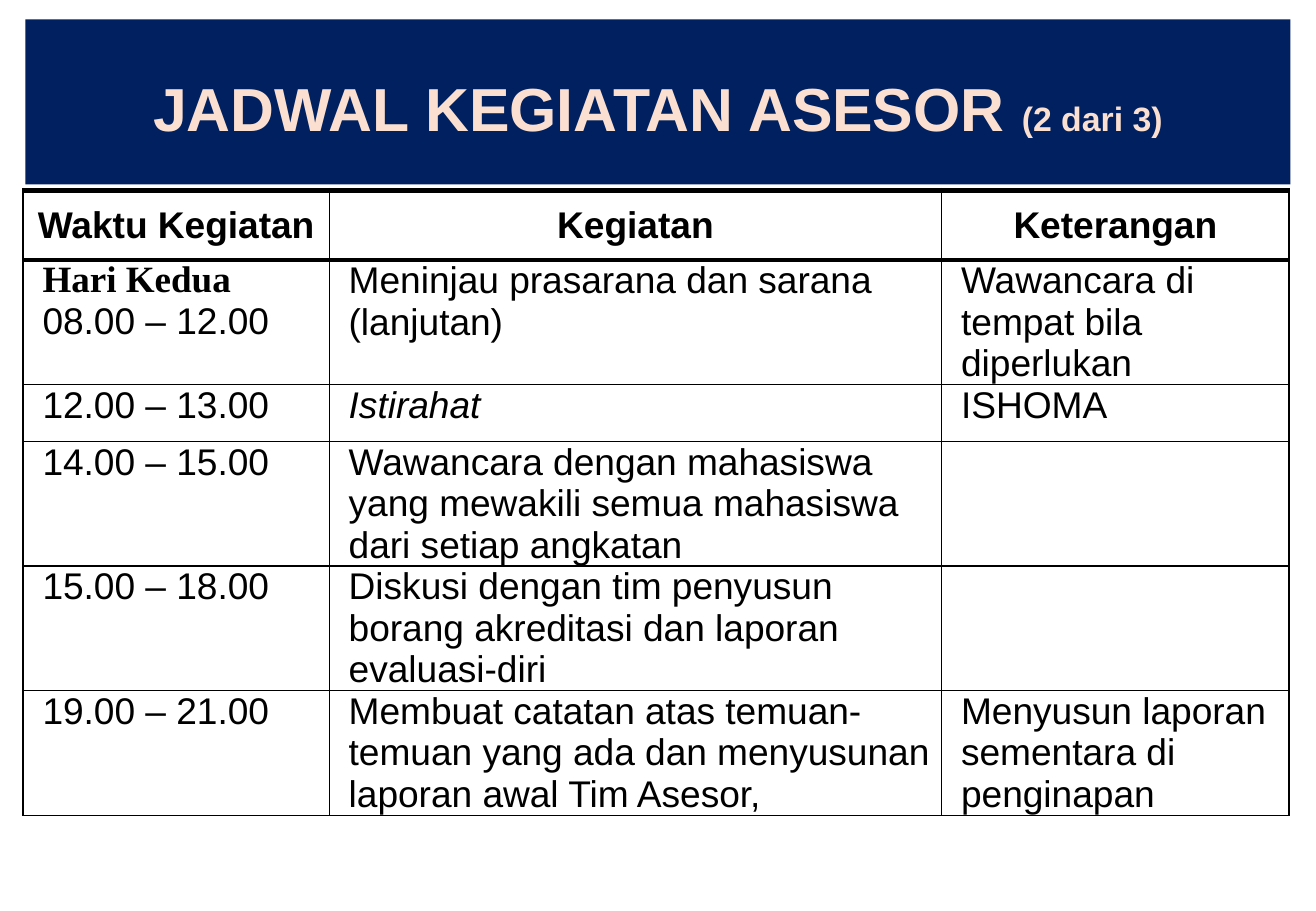
from lxml.etree import SubElement
from pptx import Presentation
from pptx.dml.color import RGBColor
from pptx.enum.shapes import MSO_SHAPE
from pptx.enum.text import MSO_ANCHOR, PP_ALIGN
from pptx.oxml.ns import qn
from pptx.util import Inches, Pt

NAVY = RGBColor(0x00, 0x20, 0x60)
PEACH = RGBColor(0xFB, 0xE0, 0xD1)
BLACK = RGBColor(0x00, 0x00, 0x00)

TITLE = [("JADWAL KEGIATAN ASESOR ", 36), ("(2 dari 3)", 20)]
HEADER = ["Waktu Kegiatan", "Kegiatan", "Keterangan"]
DAY = "Hari Kedua"
SCHEDULE = [
    ([DAY, "08.00 – 12.00"], ["Meninjau prasarana dan sarana (lanjutan)"],
     ["Wawancara di tempat bila diperlukan"]),
    (["12.00 – 13.00"], ["Istirahat"], ["ISHOMA"]),
    (["14.00 – 15.00"],
     ["Wawancara dengan mahasiswa yang mewakili semua mahasiswa dari setiap angkatan"], []),
    (["15.00 – 18.00"],
     ["Diskusi dengan tim penyusun borang akreditasi dan laporan evaluasi-diri"], []),
    (["19.00 – 21.00"],
     ["Membuat catatan atas temuan-temuan yang ada dan menyusunan laporan awal Tim Asesor,"],
     ["Menyusun laporan sementara di penginapan"]),
]
ROWS = [[[label] for label in HEADER], *SCHEDULE]

COLUMN_WIDTHS = [2.52, 5.04, 2.86]
HEADER_HEIGHT, BREAK_HEIGHT, ACTIVITY_HEIGHT = 0.57, 0.47, 1.02
ROW_HEIGHTS = [HEADER_HEIGHT, ACTIVITY_HEIGHT, BREAK_HEIGHT] + [ACTIVITY_HEIGHT] * 3
TABLE_LEFT, TABLE_TOP = 0.19, 1.57
TEXT_SIZE = 22
THIN, MEDIUM, THICK = 1, 2.25, 3.75


def add_run(paragraph, text, size, color, bold=False, italic=False, font="Arial"):
    run = paragraph.add_run()
    run.text = text
    run.font.name = font
    run.font.size = Pt(size)
    run.font.bold = bold
    run.font.italic = italic
    run.font.color.rgb = color


def set_borders(cell, top, bottom):
    properties = cell._tc.get_or_add_tcPr()
    for side, width in (("L", THIN), ("R", THIN), ("T", top), ("B", bottom)):
        line = SubElement(properties, qn(f"a:ln{side}"), w=str(Pt(width)))
        fill = SubElement(line, qn("a:solidFill"))
        SubElement(fill, qn("a:srgbClr"), val=str(BLACK))


def fill_cell(cell, lines, row):
    is_header = row == 0
    set_borders(cell, {0: THICK, 1: MEDIUM}.get(row, THIN), MEDIUM if is_header else THIN)
    cell.fill.background()
    cell.margin_left = cell.margin_right = Inches(0.04 if is_header else 0.08)
    cell.margin_top = cell.margin_bottom = 0
    cell.vertical_anchor = MSO_ANCHOR.MIDDLE if is_header else MSO_ANCHOR.TOP
    for index, text in enumerate(lines):
        frame = cell.text_frame
        paragraph = frame.add_paragraph() if index else frame.paragraphs[0]
        if is_header:
            paragraph.alignment = PP_ALIGN.CENTER
        else:
            paragraph._p.get_or_add_pPr().set("marL", str(Inches(0.08)))
        add_run(paragraph, text, TEXT_SIZE, BLACK, bold=is_header or text == DAY,
                italic=text == "Istirahat",
                font="Times New Roman" if text == DAY else "Arial")


def add_title(slide):
    shape = slide.shapes.add_shape(MSO_SHAPE.RECTANGLE, Inches(0.21), Inches(0.16),
                                   Inches(10.41), Inches(1.36))
    shape.shadow.inherit = False
    shape.fill.solid()
    shape.fill.fore_color.rgb = NAVY
    shape.line.fill.background()
    frame = shape.text_frame
    frame.word_wrap = True
    frame.vertical_anchor = MSO_ANCHOR.MIDDLE
    frame.margin_top = Inches(0.13)
    paragraph = frame.paragraphs[0]
    paragraph.alignment = PP_ALIGN.CENTER
    for text, size in TITLE:
        add_run(paragraph, text, size, PEACH, bold=True)


def add_schedule(slide):
    table = slide.shapes.add_table(
        len(ROWS), len(HEADER), Inches(TABLE_LEFT), Inches(TABLE_TOP),
        Inches(sum(COLUMN_WIDTHS)), Inches(sum(ROW_HEIGHTS))).table
    table.first_row = table.horz_banding = False
    for column, width in zip(table.columns, COLUMN_WIDTHS):
        column.width = Inches(width)
    for row, (cells, height) in enumerate(zip(ROWS, ROW_HEIGHTS)):
        table.rows[row].height = Inches(height)
        for column, lines in enumerate(cells):
            fill_cell(table.cell(row, column), lines, row)


def main():
    presentation = Presentation()
    presentation.slide_width = Inches(10.83)
    presentation.slide_height = Inches(7.5)
    slide = presentation.slides.add_slide(presentation.slide_layouts[6])
    add_schedule(slide)
    add_title(slide)
    presentation.save("out.pptx")


if __name__ == "__main__":
    main()
